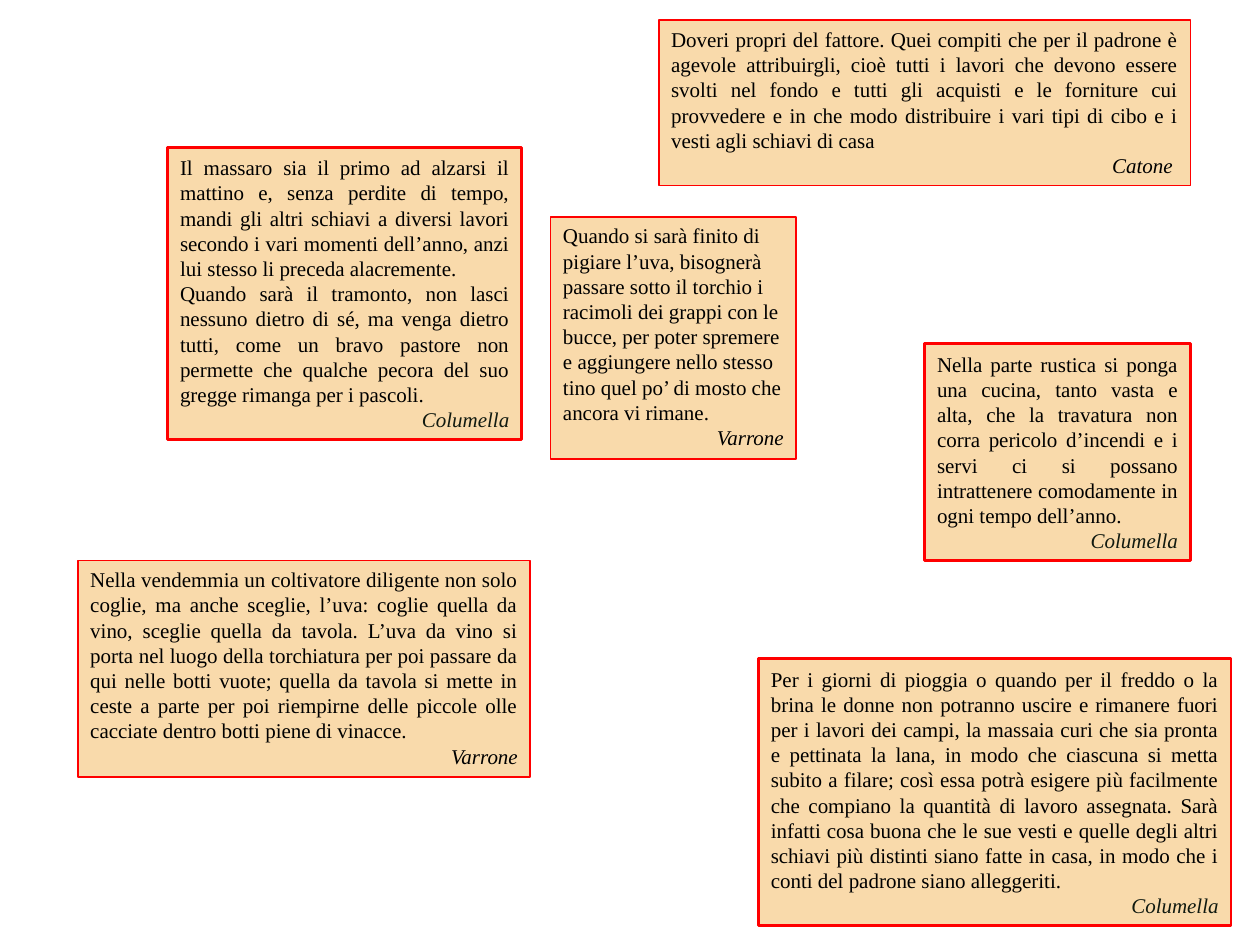
from dataclasses import dataclass

from pptx import Presentation
from pptx.dml.color import RGBColor
from pptx.enum.shapes import MSO_SHAPE
from pptx.enum.text import MSO_ANCHOR, MSO_AUTO_SIZE, PP_ALIGN
from pptx.util import Cm, Pt

RECTANGLE = MSO_SHAPE.RECTANGLE
TOP, MIDDLE = MSO_ANCHOR.TOP, MSO_ANCHOR.MIDDLE
GROW = MSO_AUTO_SIZE.SHAPE_TO_FIT_TEXT
LEFT, RIGHT, JUSTIFY = PP_ALIGN.LEFT, PP_ALIGN.RIGHT, PP_ALIGN.JUSTIFY


@dataclass(frozen=True)
class Theme:
    """Colours, typeface and sizes of the quotations."""
    font: str = "Times New Roman"
    size: Pt = Pt(12)
    ink: RGBColor = RGBColor(0, 0, 0)
    soft_ink: RGBColor = RGBColor(0x11, 0x1A, 0x10)
    paper: RGBColor = RGBColor(0xF9, 0xDA, 0xAB)
    border: RGBColor = RGBColor(0xFF, 0, 0)
    thin: Pt = Pt(1)
    thick: Pt = Pt(1.5)


@dataclass(frozen=True)
class Quotation:
    """Place in centimetres, paragraphs and author of one quotation."""
    place: tuple
    paragraphs: tuple
    author: str
    alignment: PP_ALIGN = JUSTIFY


THEME = Theme()

QUOTATIONS = (
    Quotation((18.64, 6.93, 5.36, 4.37), (
        "Nella parte rustica si ponga una cucina, tanto vasta e alta, che la "
        "travatura non corra pericolo d’incendi e i servi ci si possano "
        "intrattenere comodamente in ogni tempo dell’anno.",
    ), "Columella"),
    Quotation((13.28, 0.41, 10.72, 3.33), (
        "Doveri propri del fattore. Quei compiti che per il padrone è agevole "
        "attribuirgli, cioè tutti i lavori che devono essere svolti nel fondo e "
        "tutti gli acquisti e le forniture cui provvedere e in che modo "
        "distribuire i vari tipi di cibo e i vesti agli schiavi di casa",
    ), "Catone "),
    Quotation((3.38, 2.97, 7.14, 5.89), (
        "Il massaro sia il primo ad alzarsi il mattino e, senza perdite di "
        "tempo, mandi gli altri schiavi a diversi lavori secondo i vari momenti "
        "dell’anno, anzi lui stesso li preceda alacremente.",
        "Quando sarà il tramonto, non lasci nessuno dietro di sé, ma venga "
        "dietro tutti, come un bravo pastore non permette che qualche pecora "
        "del suo gregge rimanga per i pascoli.",
    ), "Columella"),
    Quotation((15.29, 13.28, 9.53, 5.38), (
        "Per i giorni di pioggia o quando per il freddo o la brina le donne non "
        "potranno uscire e rimanere fuori per i lavori dei campi, la massaia "
        "curi che sia pronta e pettinata la lana, in modo che ciascuna si metta "
        "subito a filare; così essa potrà esigere più facilmente che compiano "
        "la quantità di lavoro assegnata. Sarà infatti cosa buona che le sue "
        "vesti e quelle degli altri schiavi più distinti siano fatte in casa, "
        "in modo che i conti del padrone siano alleggeriti.",
    ), "Columella"),
    Quotation((1.57, 11.3, 9.12, 4.37), (
        "Nella vendemmia un coltivatore diligente non solo coglie, ma anche "
        "sceglie, l’uva: coglie quella da vino, sceglie quella da tavola. L’uva "
        "da vino si porta nel luogo della torchiatura per poi passare da qui "
        "nelle botti vuote; quella da tavola si mette in ceste a parte per poi "
        "riempirne delle piccole olle cacciate dentro botti piene di vinacce.",
    ), "Varrone"),
    Quotation((11.1, 4.37, 4.95, 4.88), (
        "Quando si sarà finito di pigiare l’uva, bisognerà passare sotto il "
        "torchio i racimoli dei grappi con le bucce, per poter spremere e "
        "aggiungere nello stesso tino quel po’ di mosto che ancora vi rimane.",
    ), "Varrone", LEFT),
)


def add_span(para, text, colour, italic=False):
    """Append one formatted run to a paragraph."""
    span = para.add_run()
    span.text = text
    span.font.name = THEME.font
    span.font.size = THEME.size
    span.font.color.rgb = colour
    span.font.italic = italic


def add_box(page, place, border_width, anchor):
    """Add a bordered paper box and return its text frame."""
    box = page.shapes.add_shape(RECTANGLE, *map(Cm, place))
    box.shadow.inherit = False
    box.fill.solid()
    box.fill.fore_color.rgb = THEME.paper
    box.line.color.rgb = THEME.border
    box.line.width = border_width
    frame = box.text_frame
    frame.word_wrap = True
    frame.auto_size = GROW
    frame.vertical_anchor = anchor
    return frame


def add_quotation(page, quotation):
    """Add a quotation, with Columella set apart by a thicker border."""
    if quotation.author == "Columella":
        border_width, anchor, author_colour = THEME.thick, MIDDLE, THEME.soft_ink
    else:
        border_width, anchor, author_colour = THEME.thin, TOP, THEME.ink
    frame = add_box(page, quotation.place, border_width, anchor)
    para = frame.paragraphs[0]
    for text in quotation.paragraphs:
        para.alignment = quotation.alignment
        add_span(para, text, THEME.ink)
        para = frame.add_paragraph()
    para.alignment = RIGHT
    add_span(para, quotation.author, author_colour, italic=True)


def main():
    """Build the slide of quotations and save the deck."""
    deck = Presentation()
    deck.slide_width, deck.slide_height = Cm(25.4), Cm(19.05)
    page = deck.slides.add_slide(deck.slide_layouts[6])
    for quotation in QUOTATIONS:
        add_quotation(page, quotation)
    deck.save("out.pptx")


if __name__ == "__main__":
    main()
